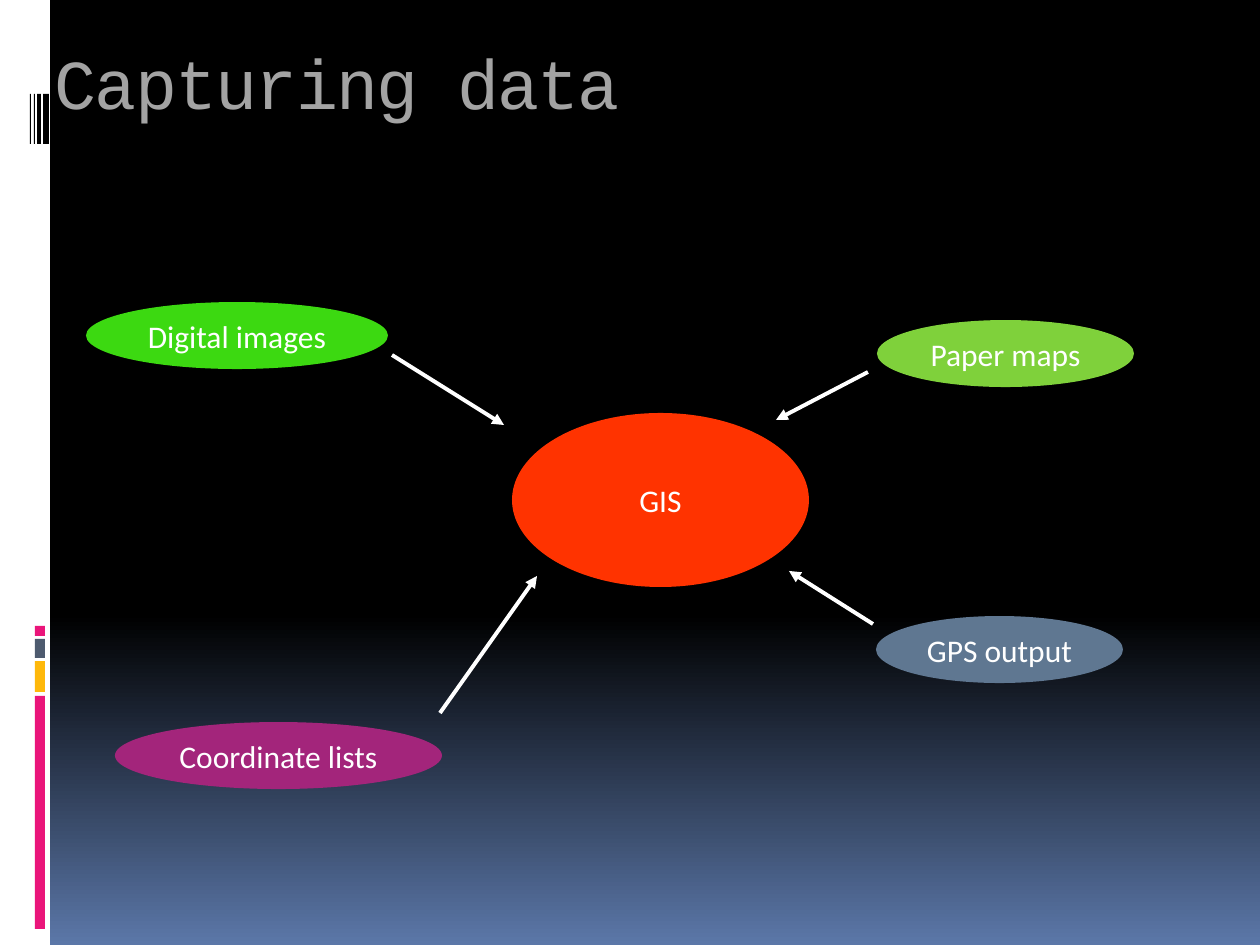
from copy import deepcopy

from lxml.etree import SubElement
from pptx import Presentation
from pptx.dml.color import RGBColor
from pptx.enum.shapes import MSO_CONNECTOR, MSO_SHAPE
from pptx.enum.text import MSO_ANCHOR, MSO_AUTO_SIZE, PP_ALIGN
from pptx.oxml.ns import qn
from pptx.util import Emu, Pt

PX_PER_INCH = 126
WHITE, BLACK, PINK = "FFFFFF", "000000", "EA157A"

STRIPES = [(626, 10, PINK), (639, 19, "4E5B6F"), (661, 31, "FEB80A"), (696, 233, PINK)]
BARCODE = [(30, 1), (34, 1), (37, 4), (43, 6)]

SOURCES = [
    ("Paper maps", (791, 18, 257, 67), "7FD13B", (782, 70), (690, 118)),
    ("Digital images", (0, 0, 302, 67), "3CD911", (306, 53), (418, 123)),
    ("GPS output", (790, 314, 247, 67), "5F7791", (787, 322), (703, 269)),
    ("Coordinate lists", (29, 420, 327, 67), "A3257B", (354, 411), (451, 274)),
]
HUB = ("GIS", (426, 111, 297, 174), "FF3300")


def px(length):
    """Turn pixels into EMU."""
    return Emu(round(length * 914400 / PX_PER_INCH))


def color(hex_string):
    """Turn a hex string into a colour."""
    return RGBColor.from_string(hex_string)


def style_text(paragraph, font_name, size, fill):
    """Format every run of a paragraph."""
    for run in paragraph.runs:
        run.font.name = font_name
        run.font.size = Pt(size)
        run.font.color.rgb = color(fill)


def add_filled(slide, preset, left, top, width, height, fill):
    """Add a flat shape without outline."""
    shape = slide.shapes.add_shape(preset, px(left), px(top), px(width), px(height))
    shape.shadow.inherit = False
    shape.fill.solid()
    shape.fill.fore_color.rgb = color(fill)
    shape.line.fill.background()
    return shape


def paint_background(slide):
    """Fade the background from black to blue in its lower third."""
    fill = slide.background.fill
    fill.gradient()
    fill.gradient_angle = 270
    upper, lower = fill.gradient_stops
    upper.color.rgb, upper.position = color(BLACK), 0
    lower.color.rgb, lower.position = color("5B77A8"), 1
    stops = slide.element.find(".//" + qn("a:gsLst"))
    fade_start = deepcopy(stops[0])
    fade_start.set("pos", "65000")
    stops.insert(1, fade_start)


def add_sidebar(slide, left, top, width, height):
    """Draw the white edge with its barcode and coloured stripes."""
    add_filled(slide, MSO_SHAPE.RECTANGLE, left, top, width, height, WHITE)
    for offset, length, fill in STRIPES:
        add_filled(slide, MSO_SHAPE.RECTANGLE, left + 35, top + offset, 10, length, fill)
    for offset, thickness in BARCODE:
        add_filled(slide, MSO_SHAPE.RECTANGLE, left + offset, top + 94, thickness, 50, BLACK)


def add_title(slide, left, top, width, height):
    """Place and format the title."""
    title = slide.shapes.title
    title.left, title.top, title.width, title.height = map(px, (left, top, width, height))
    frame = title.text_frame
    frame.text = "Capturing data"
    frame.auto_size = MSO_AUTO_SIZE.NONE
    frame.vertical_anchor = MSO_ANCHOR.MIDDLE
    heading = frame.paragraphs[0]
    heading.alignment = PP_ALIGN.LEFT
    style_text(heading, "Courier New", 40, "A3A3A3")
    heading.runs[0].font._element.set("spc", "-100")


def add_bubble(slide, left, top, width, height, label, fill):
    """Add an ellipse with a centred label."""
    bubble = add_filled(slide, MSO_SHAPE.OVAL, left, top, width, height, fill)
    frame = bubble.text_frame
    frame.text = label
    frame.word_wrap = False
    frame.vertical_anchor = MSO_ANCHOR.MIDDLE
    frame.paragraphs[0].alignment = PP_ALIGN.CENTER
    style_text(frame.paragraphs[0], "Calibri", 18, WHITE)


def add_arrow(slide, start_x, start_y, end_x, end_y):
    """Add a white arrow that points at its end."""
    arrow = slide.shapes.add_connector(
        MSO_CONNECTOR.STRAIGHT, px(start_x), px(start_y), px(end_x), px(end_y)
    )
    arrow.line.color.rgb = color(WHITE)
    arrow.line.width = Pt(2.25)
    SubElement(arrow.line._get_or_add_ln(), qn("a:tailEnd"), type="triangle")
    SubElement(arrow.element.spPr, qn("a:effectLst"))


def add_diagram(slide, left, top):
    """Draw the data sources around the hub they feed."""
    for label, (x, y, width, height), fill, start, end in SOURCES:
        add_bubble(slide, left + x, top + y, width, height, label, fill)
        add_arrow(slide, left + start[0], top + start[1], left + end[0], top + end[1])
    label, (x, y, width, height), fill = HUB
    add_bubble(slide, left + x, top + y, width, height, label, fill)


def main():
    """Build and save the slide."""
    presentation = Presentation()
    presentation.slide_width, presentation.slide_height = px(1260), px(945)
    slide = presentation.slides.add_slide(presentation.slide_layouts[5])
    paint_background(slide)
    add_sidebar(slide, 0, 0, 50, 945)
    add_title(slide, 42, 26, 1177, 111)
    add_diagram(slide, 86, 302)
    presentation.save("out.pptx")


if __name__ == "__main__":
    main()
